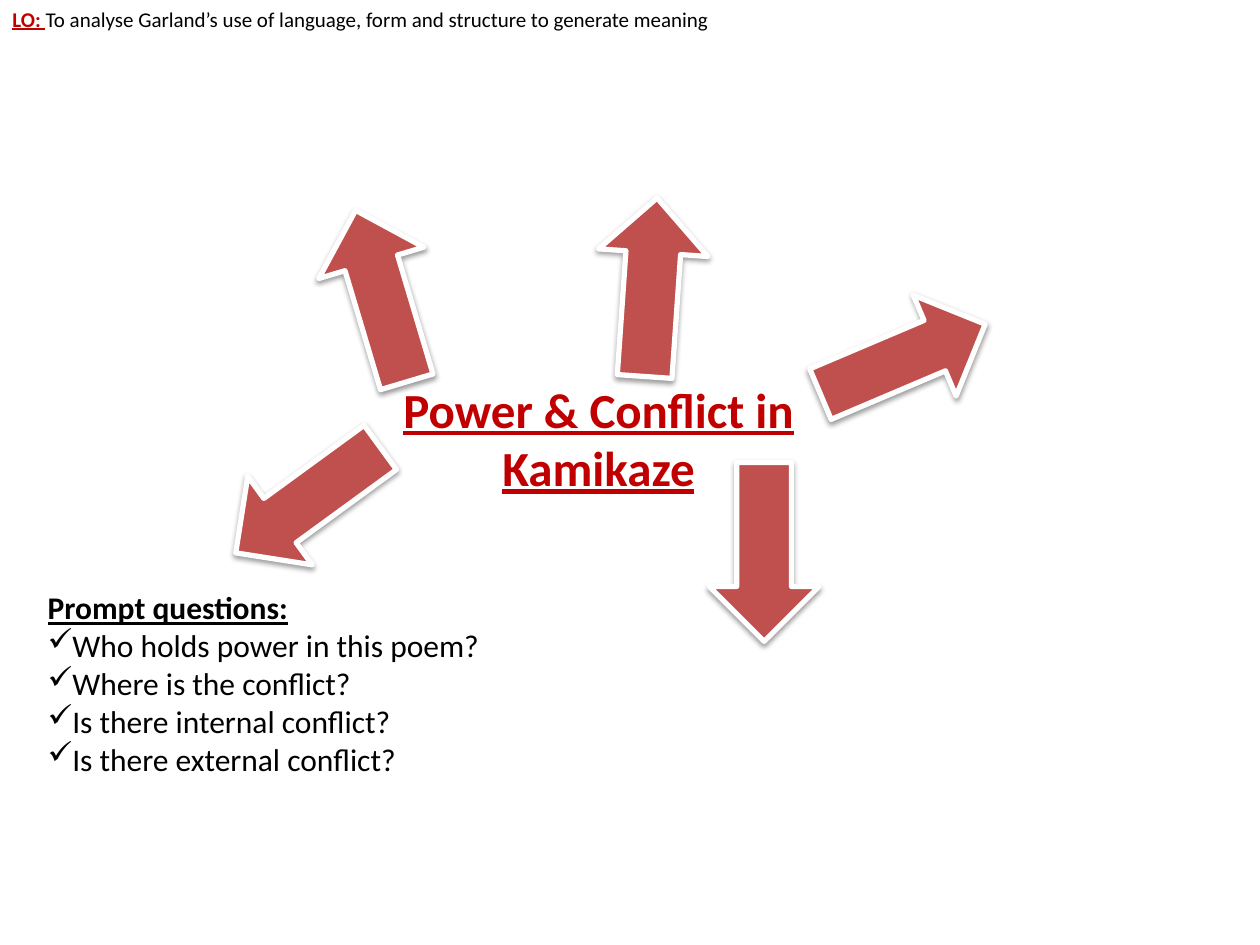
"""Build the Power & Conflict mind-map slide."""
from typing import NamedTuple

from lxml.etree import SubElement as Sub
from pptx import Presentation
from pptx.dml.color import RGBColor as Rgb
from pptx.enum.shapes import MSO_SHAPE as Shape
from pptx.enum.text import MSO_AUTO_SIZE as Fit, PP_ALIGN as Align
from pptx.oxml.ns import qn
from pptx.util import Inches, Pt


class Theme(NamedTuple):
    """Colours, font and type sizes."""
    white: Rgb = Rgb(0xFF, 0xFF, 0xFF)
    black: Rgb = Rgb(0, 0, 0)
    red: Rgb = Rgb(0xC0, 0, 0)
    brick: Rgb = Rgb(0xC0, 0x50, 0x4D)
    face: str = "Calibri"
    small: Pt = Pt(12)
    body: Pt = Pt(18)
    title: Pt = Pt(28)


class Box(NamedTuple):
    """Place of a text panel in inches."""
    left: float
    top: float
    width: float
    height: float


class Arrow(NamedTuple):
    """Corner of an arrow in inches and its turn in degrees."""
    left: float
    top: float
    turn: float


THEME = Theme()
ARROW_W, ARROW_H = Inches(0.87), Inches(1.42)
ARROWS = [
    Arrow(5.63, 3.67, 0),
    Arrow(2.01, 3.26, 53.9),
    Arrow(6.73, 2.14, 247),
    Arrow(2.59, 1.64, 163.4),
    Arrow(4.73, 1.57, 184),
]
PROMPTS = [
    "Who holds power in this poem?",
    "Where is the conflict?",
    "Is there internal conflict?",
    "Is there external conflict?",
]


def set_alpha(color, percent: int) -> None:
    """Give a colour element its opacity."""
    Sub(color, qn("a:alpha"), val=str(percent * 1000))


def add_panel(slide, box: Box):
    """Add a translucent white text panel and return its text frame."""
    panel = slide.shapes.add_textbox(*map(Inches, box))
    panel.fill.solid()
    panel.fill.fore_color.rgb = THEME.white
    set_alpha(panel.fill._xPr.find(".//" + qn("a:srgbClr")), 88)
    frame = panel.text_frame
    frame.word_wrap = True
    frame.auto_size = Fit.SHAPE_TO_FIT_TEXT
    return frame


def add_line(frame, first: bool = False):
    """Return the first paragraph of a frame or a new one."""
    return frame.paragraphs[0] if first else frame.add_paragraph()


def style(font, size: Pt, color: Rgb, strong: bool) -> None:
    """Set a font, with bold and underline when strong."""
    font.name, font.size = THEME.face, size
    font.bold = font.underline = strong
    font.color.rgb = color


def add_prompts(slide) -> None:
    """Add the ticked list of prompt questions."""
    frame = add_panel(slide, Box(0.28, 4.62, 3.9, 1.62))
    head = add_line(frame, True)
    head.text = "Prompt questions:"
    style(head.font, THEME.body, THEME.black, True)
    for text in PROMPTS:
        line = add_line(frame)
        line.text = text
        Sub(line._p.get_or_add_pPr(), qn("a:buChar"), char="✓")
        style(line.font, THEME.body, THEME.black, False)


def add_title(slide) -> None:
    """Add the central topic."""
    frame = add_panel(slide, Box(2.8, 2.96, 3.9, 1.04))
    for row, text in enumerate(["Power & Conflict in", "Kamikaze"]):
        line = add_line(frame, row == 0)
        line.text, line.alignment = text, Align.CENTER
        style(line.font, THEME.title, THEME.red, True)


def add_arrow(slide, arrow: Arrow) -> None:
    """Add one block arrow with a soft shadow."""
    shape = slide.shapes.add_shape(
        Shape.DOWN_ARROW, Inches(arrow.left), Inches(arrow.top), ARROW_W, ARROW_H)
    shape.rotation = arrow.turn
    shape.fill.solid()
    shape.fill.fore_color.rgb = THEME.brick
    shape.line.color.rgb, shape.line.width = THEME.white, Pt(3)
    shape.shadow.inherit = False
    glow = Sub(
        shape._element.spPr.find(qn("a:effectLst")), qn("a:outerShdw"),
        blurRad=str(Pt(3.1)), dist=str(Pt(1.6)), dir=str(90 * 60000), rotWithShape="0")
    set_alpha(Sub(glow, qn("a:srgbClr"), val=str(THEME.black)), 38)


def add_goal(slide) -> None:
    """Add the learning objective along the top."""
    line = add_line(add_panel(slide, Box(0, 0, 10, 0.3)), True)
    props = line._p.get_or_add_pPr()
    props.set("marL", str(Inches(0.31)))
    props.set("indent", str(Inches(-0.31)))
    goal = "To analyse Garland’s use of language, form and structure to generate meaning"
    for text, color, strong in [("LO: ", THEME.red, True), (goal, THEME.black, False)]:
        run = line.add_run()
        run.text = text
        style(run.font, THEME.small, color, strong)


def main() -> None:
    """Draw the slide and save it."""
    deck = Presentation()
    deck.slide_width, deck.slide_height = Inches(10), Inches(7.5)
    slide = deck.slides.add_slide(deck.slide_layouts[6])
    add_prompts(slide)
    add_title(slide)
    for arrow in ARROWS:
        add_arrow(slide, arrow)
    add_goal(slide)
    deck.save("out.pptx")


if __name__ == "__main__":
    main()
